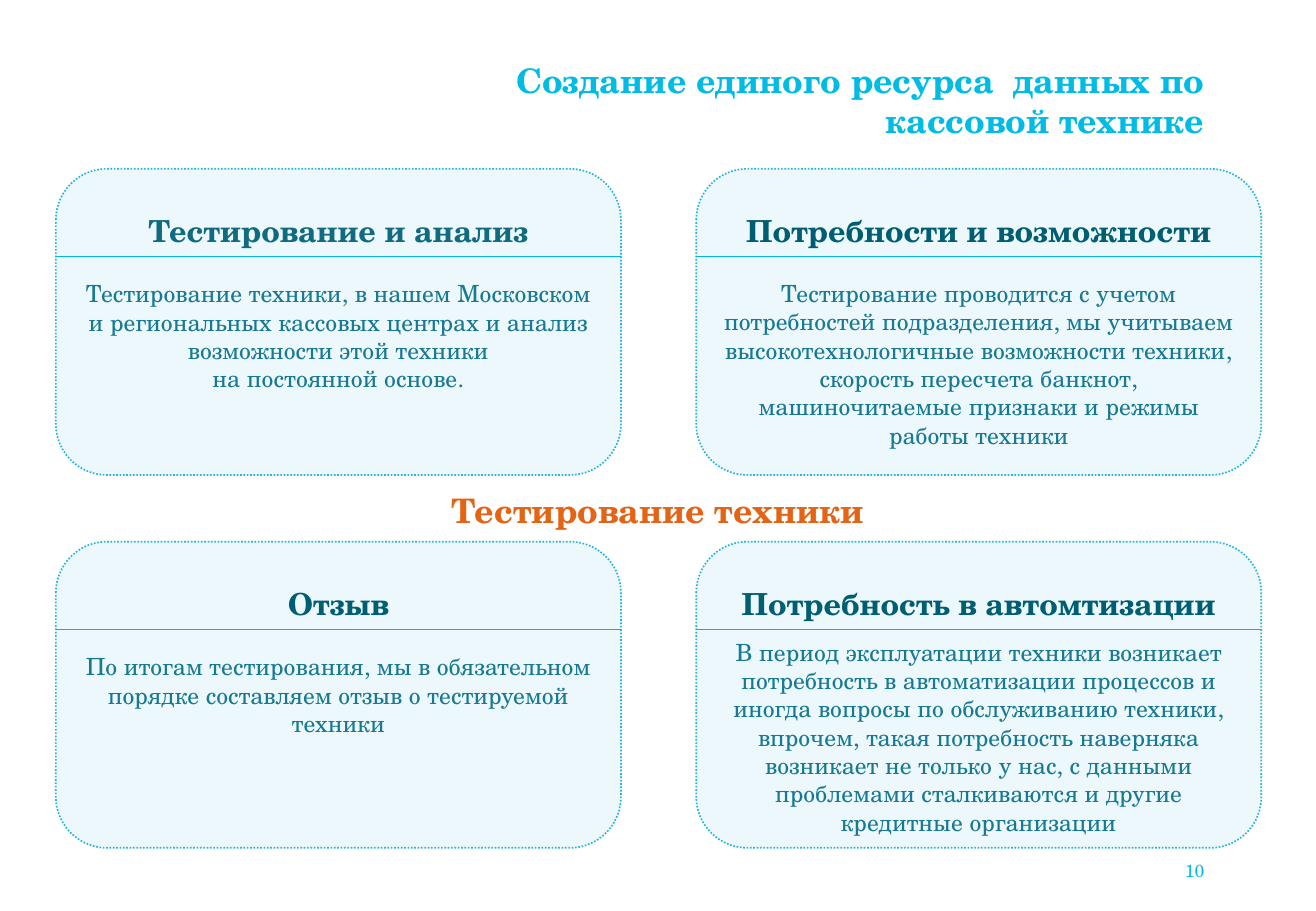
from pptx import Presentation
from pptx.dml.color import RGBColor
from pptx.enum.dml import MSO_LINE_DASH_STYLE as Dash
from pptx.enum.shapes import MSO_CONNECTOR as Connector, MSO_SHAPE as Shape
from pptx.enum.text import MSO_ANCHOR as Anchor, PP_ALIGN as Align
from pptx.oxml.ns import qn
from pptx.util import Inches, Pt
from lxml import etree

FONT = "TeX Gyre Schola"
CARD_WIDTH, CARD_HEIGHT = 4.65, 2.52
COLUMN_LEFT, COLUMN_STEP = 0.46, 5.27
ROW_TOP, ROW_STEP = 1.39, 3.07
HEADING_OFFSET, HEADING_HEIGHT, RULE_OFFSET = 0.31, 0.4, 0.72
BODY_LINE = 0.23

CARDS = [
    ("Тестирование и анализ", "116B80", 1,
     ["Тестирование техники, в нашем Московском и региональных кассовых "
      "центрах и анализ возможности этой техники",
      "на постоянной основе."]),
    ("Потребности и возможности", "005E72", 3,
     ["Тестирование проводится с учетом потребностей подразделения, мы "
      "учитываем высокотехнологичные возможности техники, скорость "
      "пересчета банкнот, машиночитаемые признаки и режимы работы техники"]),
    ("Отзыв", "005E72", 0,
     ["По итогам тестирования, мы в обязательном порядке составляем отзыв "
      "о тестируемой техники"]),
    ("Потребность в автомтизации", "005E72", 3,
     ["В период эксплуатации техники возникает потребность в автоматизации "
      "процессов и иногда вопросы по обслуживанию техники, впрочем, такая "
      "потребность наверняка возникает не только у нас, с данными "
      "проблемами сталкиваются и другие кредитные организации"]),
]


def color(value):
    return RGBColor.from_string(value)


def write(frame, lines, size, ink, align=Align.CENTER, bold=False,
          anchor=Anchor.MIDDLE):
    frame.word_wrap = True
    frame.vertical_anchor = anchor
    for index, line in enumerate(lines):
        para = frame.paragraphs[0] if index == 0 else frame.add_paragraph()
        para.text = line
        para.alignment = align
        para.font.name = FONT
        para.font.size = Pt(size)
        para.font.bold = bold
        para.font.color.rgb = color(ink)


def add_label(page, box, text, size, ink, **style):
    label = page.shapes.add_textbox(*map(Inches, box))
    write(label.text_frame, [text], size, ink, **style)


def add_rule(page, left, top, width):
    rule = page.shapes.add_connector(
        Connector.STRAIGHT, *map(Inches, (left, top, left + width, top)))
    rule.line.color.rgb = color("00B8DF")
    rule.line.width = Pt(0.75)
    etree.SubElement(rule._element.spPr, qn("a:effectLst"))


def add_card(page, left, top, heading, heading_ink, skipped_lines, body):
    card = page.shapes.add_shape(
        Shape.ROUNDED_RECTANGLE,
        *map(Inches, (left, top, CARD_WIDTH, CARD_HEIGHT)))
    card.shadow.inherit = False
    card.fill.solid()
    card.fill.fore_color.rgb = color("ECF8FB")
    card.line.color.rgb = color("26B5DB")
    card.line.width = Pt(1)
    card.line.dash_style = Dash.ROUND_DOT
    card.text_frame.margin_top = Inches(0.05 + skipped_lines * BODY_LINE)
    write(card.text_frame, body, 14, "187993")
    add_rule(page, left, top + RULE_OFFSET, CARD_WIDTH)
    add_label(page, (left, top + HEADING_OFFSET, CARD_WIDTH, HEADING_HEIGHT),
              heading, 18, heading_ink, bold=True, anchor=Anchor.TOP)


def add_card_grid(page):
    for index, card in enumerate(CARDS):
        row, column = divmod(index, 2)
        add_card(page, COLUMN_LEFT + column * COLUMN_STEP,
                 ROW_TOP + row * ROW_STEP, *card)


def main():
    deck = Presentation()
    deck.slide_width, deck.slide_height = Inches(10.83), Inches(7.5)
    page = deck.slides.add_slide(deck.slide_layouts[6])
    add_label(page, (3.42, 0.35, 6.59, 0.95),
              "Создание единого ресурса  данных по кассовой технике",
              20, "00BCE4", align=Align.RIGHT, bold=True)
    add_card_grid(page)
    add_label(page, (3.29, 3.98, 4.25, 0.44), "Тестирование техники",
              20, "E46416", bold=True, anchor=Anchor.TOP)
    add_label(page, (8.89, 7.05, 1.12, 0.24), "10", 10.5, "00BCE4",
              align=Align.RIGHT)
    deck.save("out.pptx")


if __name__ == "__main__":
    main()
